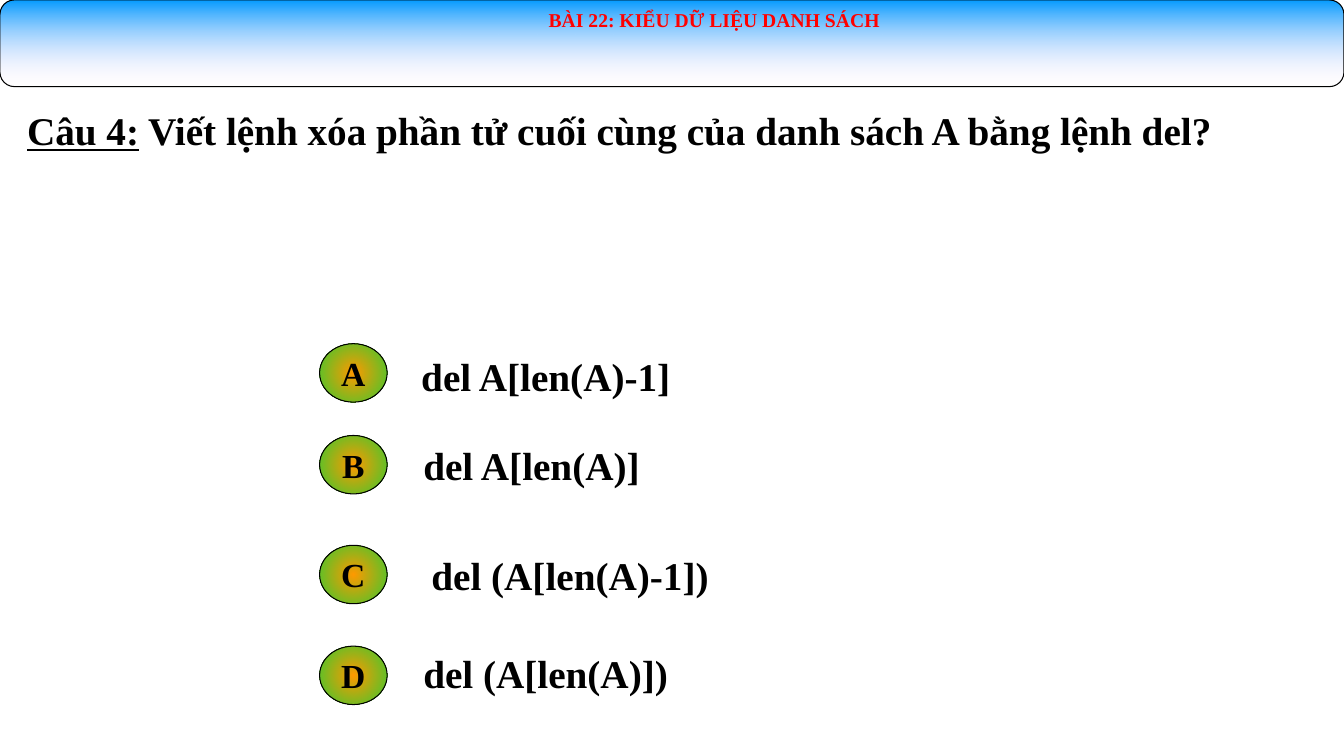
from pptx import Presentation
from pptx.dml.color import RGBColor
from pptx.enum.shapes import MSO_SHAPE
from pptx.enum.text import MSO_ANCHOR, PP_ALIGN
from pptx.oxml import parse_xml
from pptx.oxml.ns import nsdecls
from pptx.util import Inches, Pt

BLACK = RGBColor(0x00, 0x00, 0x00)
RED = RGBColor(0xFF, 0x00, 0x00)
ORANGE = RGBColor(0xFF, 0x99, 0x00)
GREEN = RGBColor(0x33, 0xCC, 0x33)
BLUE = RGBColor(0x00, 0x99, 0xFF)
PINK = RGBColor(0xFF, 0xE5, 0xFF)

DOWNWARD = '<a:lin ang="5400000" scaled="1"/>'
FROM_CENTRE = ('<a:path path="circle"><a:fillToRect l="50000" t="50000" '
               'r="50000" b="50000"/></a:path>')

# letter, badge top, answer, answer left, top, width, height, line spacing
ANSWERS = [
    ("A", 3.41, "del A[len(A)-1]", 4.08, 3.5, 2.7, 0.53, 0.9),
    ("B", 4.32, "del A[len(A)]", 4.1, 4.33, 2.38, 0.57, None),
    ("C", 5.41, "del (A[len(A)-1])", 4.18, 5.42, 2.99, 0.57, None),
    ("D", 6.41, "del (A[len(A)])", 4.1, 6.39, 2.66, 0.57, None),
]


def add_text(para, text, size=28, color=BLACK, underline=False):
    span = para.add_run()
    span.text = text
    font = span.font
    font.name, font.size, font.bold = "Times New Roman", Pt(size), True
    font.color.rgb = color
    font.underline = underline


class QuizPage:
    def __init__(self, page):
        self.shapes = page.shapes

    def gradient_shape(self, preset, area, start, end, direction, end_alpha=100):
        """Add an outlined shape whose fill runs from start to end."""
        shape = self.shapes.add_shape(preset, *map(Inches, area))
        shape.shadow.inherit = False
        shape.line.color.rgb = BLACK
        shape.line.width = Pt(0.75)
        # The fill belongs right after the position and the geometry.
        shape._element.spPr.insert(2, parse_xml(
            f'<a:gradFill {nsdecls("a")} rotWithShape="1"><a:gsLst>'
            f'<a:gs pos="0"><a:srgbClr val="{start}"/></a:gs>'
            f'<a:gs pos="100000"><a:srgbClr val="{end}">'
            f'<a:alpha val="{end_alpha * 1000}"/></a:srgbClr></a:gs>'
            f'</a:gsLst>{direction}</a:gradFill>'))
        return shape

    def badge(self, letter, top):
        oval = self.gradient_shape(MSO_SHAPE.OVAL, (3.17, top, 0.67, 0.58),
                                   ORANGE, GREEN, FROM_CENTRE)
        frame = oval.text_frame
        frame.vertical_anchor = MSO_ANCHOR.MIDDLE
        para = frame.paragraphs[0]
        para.alignment = PP_ALIGN.CENTER
        add_text(para, letter, size=24)

    def text_box(self, area, align=PP_ALIGN.LEFT, line_spacing=None):
        """Add a wrapping text box and return its empty paragraph."""
        box = self.shapes.add_textbox(*map(Inches, area))
        box.text_frame.word_wrap = True
        para = box.text_frame.paragraphs[0]
        para.alignment = align
        para.line_spacing = line_spacing
        return para


def main():
    deck = Presentation()
    deck.slide_width, deck.slide_height = Inches(13.33), Inches(7.5)
    quiz = QuizPage(deck.slides.add_slide(deck.slide_layouts[6]))

    banner = quiz.gradient_shape(MSO_SHAPE.ROUNDED_RECTANGLE, (0, 0, 13.33, 0.86),
                                 BLUE, PINK, DOWNWARD, end_alpha=0)
    banner.adjustments[0] = 0.167
    title = quiz.text_box((2, 0.03, 10.17, 0.83), align=PP_ALIGN.CENTER)
    add_text(title, "BÀI 22: KIỂU DỮ LIỆU DANH SÁCH", size=14, color=RED)

    question = quiz.text_box((0.17, 1.06, 13.17, 0.53), line_spacing=0.9)
    add_text(question, "Câu 4:", underline=True)
    add_text(question, " Viết lệnh xóa phần tử cuối cùng của danh sách A bằng lệnh del?")

    for letter, badge_top, answer, left, top, width, height, spacing in ANSWERS:
        quiz.badge(letter, badge_top)
        add_text(quiz.text_box((left, top, width, height), line_spacing=spacing), answer)

    deck.save("out.pptx")


if __name__ == "__main__":
    main()
